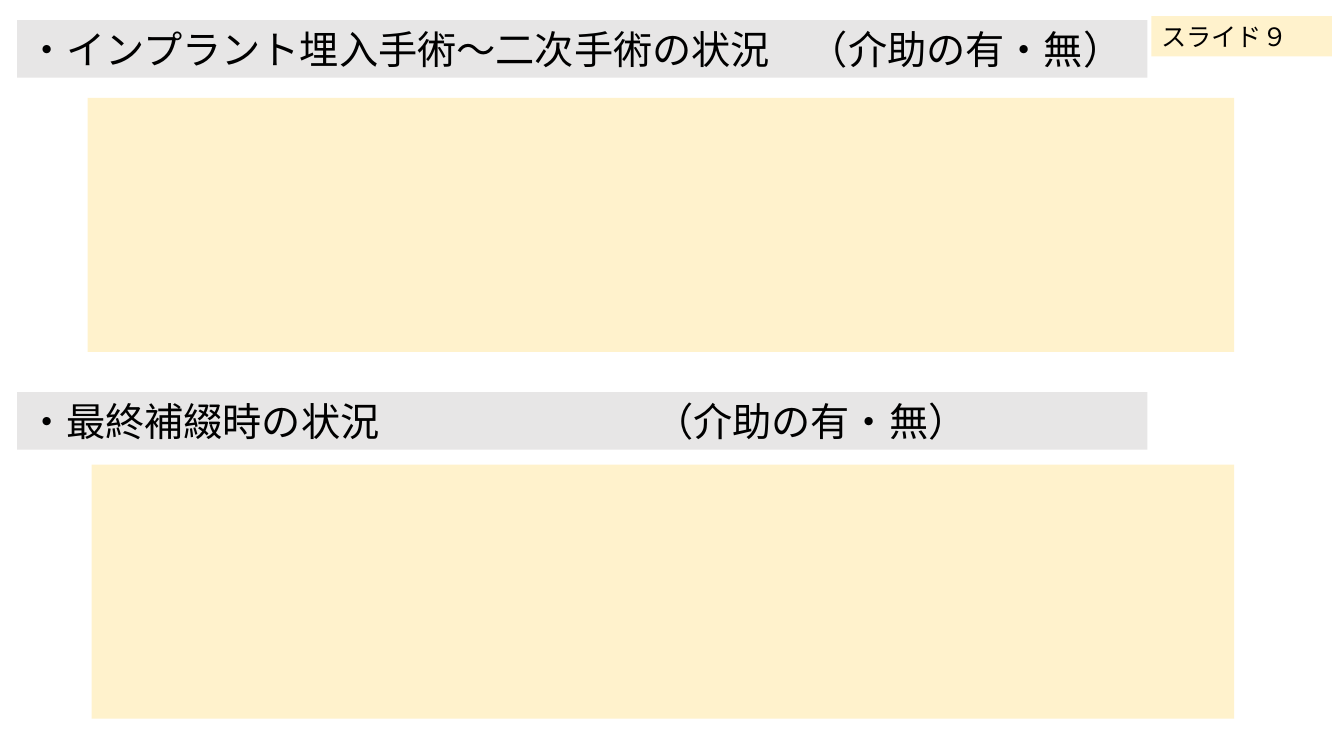
"""Build the slide on implant surgery and final prosthesis status."""
from lxml import etree
from pptx import Presentation
from pptx.dml.color import RGBColor
from pptx.enum.shapes import MSO_SHAPE
from pptx.enum.text import MSO_ANCHOR, PP_ALIGN
from pptx.oxml.ns import qn
from pptx.util import Inches, Pt

GREY, CREAM, BLACK = "E7E6E6", "FFF2CC", "000000"
GOTHIC = "Noto Sans CJK JP"


def color(value):
    return RGBColor.from_string(value)


def add_box(slide, left, top, width, height, fill):
    sp = slide.shapes.add_shape(
        MSO_SHAPE.RECTANGLE, Inches(left), Inches(top), Inches(width), Inches(height))
    sp.shadow.inherit = False
    sp.fill.solid()
    sp.fill.fore_color.rgb = color(fill)
    sp.line.fill.background()
    return sp


prs = Presentation()
prs.slide_width, prs.slide_height = Inches(13.33), Inches(7.5)
slide = prs.slides.add_slide(prs.slide_layouts[6])

for left, top, width in [(0.87, 0.97, 11.37), (0.91, 4.61, 11.33)]:
    add_box(slide, left, top, width, 2.52, CREAM)

heading = {"size": Pt(28), "name": GOTHIC}
label = {"size": Pt(18), "name": "Calibri"}
texts = [
    ("・インプラント埋入手術～二次手術の状況　（介助の有・無）", (0.17, 0.2, 11.21, 0.57), GREY, heading),
    ("・最終補綴時の状況\t（介助の有・無）", (0.17, 3.89, 11.21, 0.57), GREY, heading),
    ("スライド９", (11.42, 0.16, 1.79, 0.4), CREAM, label),
]
for text, box, fill, font in texts:
    sp = add_box(slide, *box, fill)
    tf = sp.text_frame
    tf.word_wrap = True
    tf.vertical_anchor = MSO_ANCHOR.TOP
    p = tf.paragraphs[0]
    p.alignment = PP_ALIGN.LEFT
    if "\t" in text:
        tabs = etree.SubElement(p._p.get_or_add_pPr(), qn("a:tabLst"))
        etree.SubElement(tabs, qn("a:tab"), pos=str(Inches(6.22)), algn="l")
    r = p.add_run()
    r.text = text
    for key, value in font.items():
        setattr(r.font, key, value)
    r.font.color.rgb = color(BLACK)
    r.font._element.find(qn("a:latin")).addnext(
        etree.Element(qn("a:ea"), typeface=GOTHIC))

prs.save("out.pptx")
